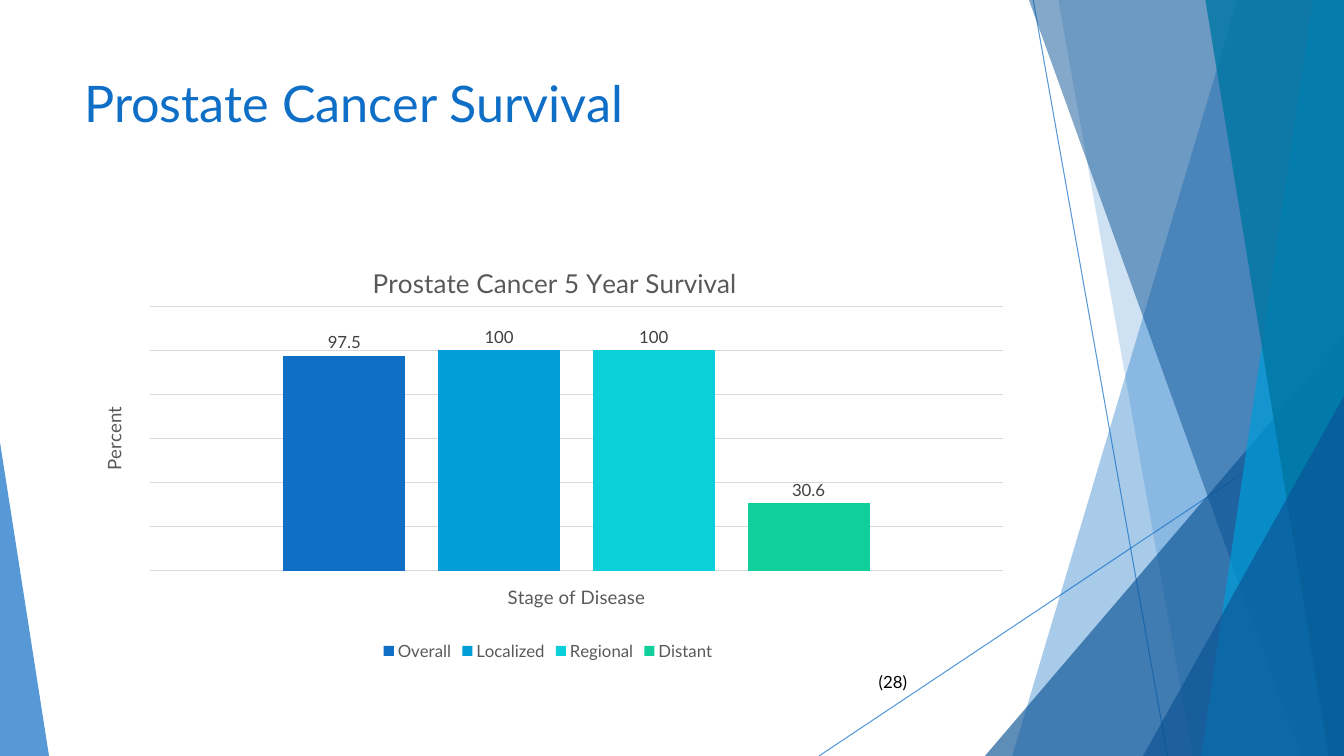
from lxml import etree
from pptx import Presentation
from pptx.chart.data import CategoryChartData
from pptx.dml.color import RGBColor
from pptx.enum.chart import XL_CHART_TYPE, XL_LABEL_POSITION, XL_LEGEND_POSITION
from pptx.enum.shapes import MSO_CONNECTOR, MSO_SHAPE
from pptx.enum.text import MSO_ANCHOR, PP_ALIGN
from pptx.oxml import parse_xml
from pptx.oxml.ns import nsdecls, qn
from pptx.util import Pt

FONT = "Lato"
WIDTH, HEIGHT = 960, 540
COLORS = {
    "blue": "0F6FC6", "navy": "0B5394", "sky": "009DD9", "teal": "0076A3",
    "aqua": "0BD0D9", "green": "10CF9B", "grid": "D9D9D9",
    "label": "404040", "caption": "595959", "black": "000000",
}
SURVIVAL = [
    ("Overall", 97.5, "blue"),
    ("Localized", 100, "sky"),
    ("Regional", 100, "aqua"),
    ("Distant", 30.6, "green"),
]


def rgb(name):
    return RGBColor.from_string(COLORS[name])


def set_font(font, size, color):
    font.name, font.size, font.bold = FONT, Pt(size), False
    font.color.rgb = rgb(color)


def set_opacity(shape, percent):
    color = shape.element.xpath(".//a:solidFill/a:srgbClr")[0]
    etree.SubElement(color, qn("a:alpha")).set("val", str(percent * 1000))


def paint(shape, color, opacity):
    shape.shadow.inherit = False
    shape.fill.solid()
    shape.fill.fore_color.rgb = rgb(color)
    shape.line.fill.background()
    set_opacity(shape, opacity)


def add_thin_line(slide, *ends):
    line = slide.shapes.add_connector(MSO_CONNECTOR.STRAIGHT, *map(Pt, ends))
    line.line.width = Pt(0.75)
    line.line.color.rgb = rgb("blue")
    set_opacity(line, 70)
    etree.SubElement(line.element.spPr, qn("a:effectLst"))


def add_edge_band(slide, top_x, bottom_x, color, opacity):
    """Full-height band from a slanted left edge to the slide's right edge."""
    builder = slide.shapes.build_freeform(Pt(top_x), 0)
    corners = [(WIDTH, 0), (WIDTH, HEIGHT), (bottom_x, HEIGHT)]
    builder.add_line_segments([(Pt(x), Pt(y)) for x, y in corners])
    paint(builder.convert_to_shape(), color, opacity)


def add_corner_triangle(slide, left, top, width, apex, color, opacity):
    """Triangle standing on the slide's bottom edge."""
    triangle = slide.shapes.add_shape(
        MSO_SHAPE.ISOSCELES_TRIANGLE, Pt(left), Pt(top), Pt(width), Pt(HEIGHT - top))
    triangle.adjustments[0] = apex
    paint(triangle, color, opacity)


def add_decoration(slide):
    add_thin_line(slide, 738, 0, 834, HEIGHT)
    add_thin_line(slide, WIDTH, 290, 585, HEIGHT)
    add_edge_band(slide, 884, 723, "blue", 36)
    add_edge_band(slide, 756, 852, "blue", 20)
    add_corner_triangle(slide, 703.5, 240, 256.5, 1, "navy", 66)
    add_edge_band(slide, 735, 929.5, "navy", 50)
    add_edge_band(slide, 938, 858, "sky", 70)
    add_edge_band(slide, 861, 949, "teal", 80)
    add_corner_triangle(slide, 816.5, 283, 143.5, 1, "navy", 66)
    add_corner_triangle(slide, 0, 316, 35, 0, "blue", 70)


def set_title(slide, text):
    title = slide.shapes.title
    title.left, title.top, title.width, title.height = map(Pt, (53, 48, 677, 104))
    title.text_frame.text = text
    title.text_frame.vertical_anchor = MSO_ANCHOR.TOP
    paragraph = title.text_frame.paragraphs[0]
    paragraph.alignment = PP_ALIGN.LEFT
    set_font(paragraph.font, 36, "blue")


def add_caption(owner, text, size):
    """Title of a chart or of an axis."""
    owner.has_text_frame = True
    owner.text_frame.text = text
    set_font(owner.text_frame.paragraphs[0].font, size, "caption")


def place_chart_part(part, index, target="", **fractions):
    """Fix a chart part at fractions of the chart's size."""
    for layout in part.findall(qn("c:layout")):
        part.remove(layout)
    inner = f'<c:layoutTarget val="{target}"/>' if target else ""
    modes = '<c:xMode val="edge"/><c:yMode val="edge"/>'
    sizes = "".join(f'<c:{key} val="{value}"/>' for key, value in fractions.items())
    part.insert(index, parse_xml(
        f'<c:layout {nsdecls("c")}><c:manualLayout>{inner}{modes}{sizes}'
        "</c:manualLayout></c:layout>"))


def add_survival_chart(slide):
    data = CategoryChartData()
    data.categories = ["1"]
    for name, percent, _ in SURVIVAL:
        data.add_series(name, [percent])
    chart = slide.shapes.add_chart(
        XL_CHART_TYPE.COLUMN_CLUSTERED, Pt(53), Pt(170), Pt(677), Pt(305), data).chart
    set_font(chart.font, 10, "black")

    chart.has_title = True
    add_caption(chart.chart_title, "Prostate Cancer 5 Year Survival", 18.6)
    chart.has_legend = True
    chart.legend.position = XL_LEGEND_POSITION.BOTTOM
    chart.legend.include_in_layout = False
    set_font(chart.legend.font, 12, "caption")

    for axis, text in ((chart.category_axis, "Stage of Disease"),
                       (chart.value_axis, "Percent")):
        axis.has_title = True
        add_caption(axis.axis_title, text, 13.3)
        axis.visible = False
    values = chart.value_axis
    values.minimum_scale, values.maximum_scale, values.major_unit = 0, 120, 20
    values.has_major_gridlines = True
    values.major_gridlines.format.line.width = Pt(0.75)
    values.major_gridlines.format.line.color.rgb = rgb("grid")

    plot = chart.plots[0]
    plot.vary_by_categories = False
    plot.gap_width, plot.overlap = 219, -27
    for series, (_, _, color) in zip(plot.series, SURVIVAL):
        series.format.fill.solid()
        series.format.fill.fore_color.rgb = rgb(color)
        labels = series.data_labels
        labels.show_value = True
        labels.position = XL_LABEL_POSITION.OUTSIDE_END
        set_font(labels.font, 12, "label")

    place_chart_part(chart.element.xpath("c:chart/c:title")[0], 1, x=0.31, y=0.05)
    place_chart_part(chart.element.xpath("c:chart/c:plotArea")[0], 0, "inner",
                     x=0.08, y=0.16, w=0.9, h=0.62)


def add_reference(slide, text):
    box = slide.shapes.add_textbox(Pt(620.5), Pt(476), Pt(65), Pt(22))
    box.text_frame.word_wrap = True
    box.text_frame.text = text
    set_font(box.text_frame.paragraphs[0].font, 12, "black")


def main():
    presentation = Presentation()
    presentation.slide_width, presentation.slide_height = Pt(WIDTH), Pt(HEIGHT)
    slide = presentation.slides.add_slide(presentation.slide_layouts[5])
    add_decoration(slide)
    set_title(slide, "Prostate Cancer Survival")
    add_survival_chart(slide)
    add_reference(slide, "(28)")
    presentation.save("out.pptx")


if __name__ == "__main__":
    main()
